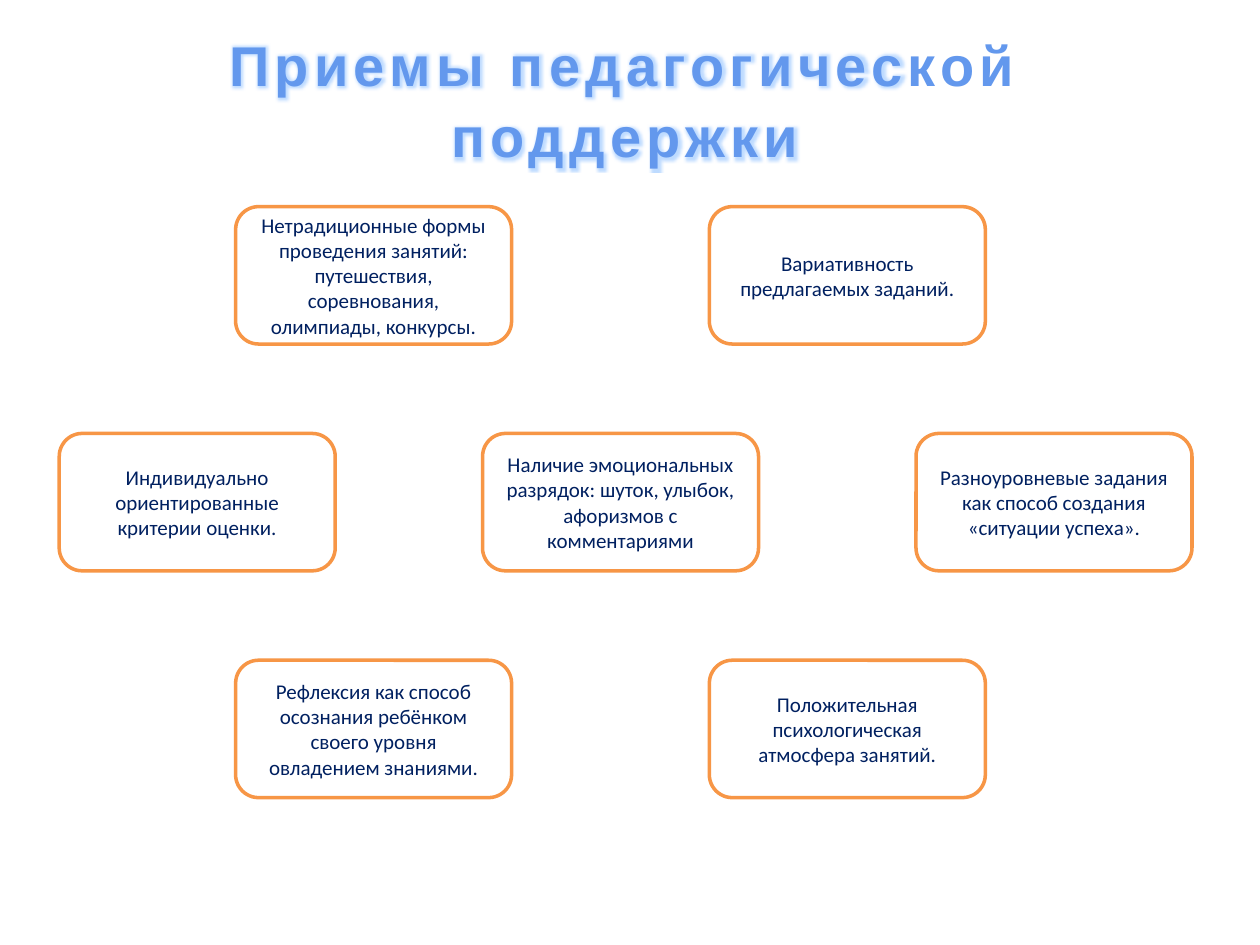
import pptx
import pptx.util
import pptx.dml.color
import pptx.enum.shapes
import pptx.enum.text
import lxml.etree

WIDTH, HEIGHT = 10, 7.5
CARD_SIZE = (2.19, 1.09)
FIRST_ROW, ROW_STEP = 1.64, 1.8
PAIR_COLUMNS = (1.87, 5.63)
TRIPLE_COLUMNS = (0.47, 3.83, 7.27)
DRAWING = "http://schemas.openxmlformats.org/drawingml/2006/main"

ROWS = [
    (PAIR_COLUMNS, [
        "Нетрадиционные формы проведения занятий: путешествия, соревнования, олимпиады, конкурсы.",
        "Вариативность предлагаемых заданий.",
    ]),
    (TRIPLE_COLUMNS, [
        "Индивидуально ориентированные критерии оценки.",
        "Наличие эмоциональных разрядок: шуток, улыбок, афоризмов с комментариями",
        "Разноуровневые задания как способ создания «ситуации успеха».",
    ]),
    (PAIR_COLUMNS, [
        "Рефлексия как способ осознания ребёнком своего уровня овладением знаниями.",
        "Положительная психологическая атмосфера занятий.",
    ]),
]


def color(value):
    return pptx.dml.color.RGBColor.from_string(value)


def apply(target, formats):
    for name, value in formats.items():
        setattr(target, name, value)


class SupportSlide:
    title_font = {"name": "Arial", "size": pptx.util.Pt(32), "bold": True}
    card_font = {"name": "Calibri", "size": pptx.util.Pt(12)}
    title_stops = ((0.1, "6398ED"), (0.75, "265EA0"))
    outline = "F4F6F9"
    glow = "9CC8FF"
    accent = "F79646"
    ink = "002060"
    paper = "FFFFFF"

    def __init__(self, deck):
        self.slide = deck.slides.add_slide(deck.slide_layouts[5])

    def place(self, shape, left, top, width, height):
        lengths = zip(("left", "top", "width", "height"), (left, top, width, height))
        apply(shape, {side: pptx.util.Inches(length) for side, length in lengths})

    def add_phrase(self, frame, text, anchor, formats):
        apply(frame, {"word_wrap": True, "vertical_anchor": anchor})
        paragraph = frame.paragraphs[0]
        paragraph.alignment = pptx.enum.text.PP_ALIGN.CENTER
        phrase = paragraph.add_run()
        phrase.text = text
        apply(phrase.font, formats)
        return phrase

    def title(self, text):
        heading = self.slide.shapes.title
        self.place(heading, 0.31, 0.16, 9.3, 1.18)
        frame = heading.text_frame
        phrase = self.add_phrase(
            frame, text, pptx.enum.text.MSO_ANCHOR.TOP, self.title_font)
        frame.auto_size = pptx.enum.text.MSO_AUTO_SIZE.SHAPE_TO_FIT_TEXT
        frame.paragraphs[0].line_spacing = 1.06
        fill = phrase.font.fill
        fill.gradient()
        fill.gradient_angle = 270
        for stop, (position, shade) in zip(fill.gradient_stops, self.title_stops):
            stop.position = position
            stop.color.rgb = color(shade)
        self.decorate(phrase)

    def decorate(self, phrase):
        properties = phrase._r.get_or_add_rPr()
        properties.set("spc", "300")
        properties.insert(0, pptx.oxml.parse_xml(
            f'<a:ln xmlns:a="{DRAWING}" w="11430"><a:solidFill>'
            f'<a:srgbClr val="{self.outline}"/></a:solidFill></a:ln>'))
        properties.insert(2, pptx.oxml.parse_xml(
            f'<a:effectLst xmlns:a="{DRAWING}"><a:glow rad="45500">'
            f'<a:srgbClr val="{self.glow}"><a:alpha val="65000"/></a:srgbClr>'
            f'</a:glow></a:effectLst>'))

    def card(self, text, left, row):
        card = self.slide.shapes.add_shape(
            pptx.enum.shapes.MSO_SHAPE.ROUNDED_RECTANGLE, 0, 0, 0, 0)
        self.place(card, left, FIRST_ROW + row * ROW_STEP, *CARD_SIZE)
        card.shadow.inherit = False
        card.fill.solid()
        card.fill.fore_color.rgb = color(self.paper)
        card.line.color.rgb = color(self.accent)
        card.line.width = pptx.util.Pt(2)
        phrase = self.add_phrase(
            card.text_frame, text, pptx.enum.text.MSO_ANCHOR.MIDDLE, self.card_font)
        phrase.font.color.rgb = color(self.ink)


def main():
    deck = pptx.Presentation()
    apply(deck, {"slide_width": pptx.util.Inches(WIDTH),
                 "slide_height": pptx.util.Inches(HEIGHT)})
    support = SupportSlide(deck)
    support.title("Приемы педагогической поддержки")
    for row, (columns, techniques) in enumerate(ROWS):
        for left, technique in zip(columns, techniques):
            support.card(technique, left, row)
    deck.save("out.pptx")


if __name__ == "__main__":
    main()
